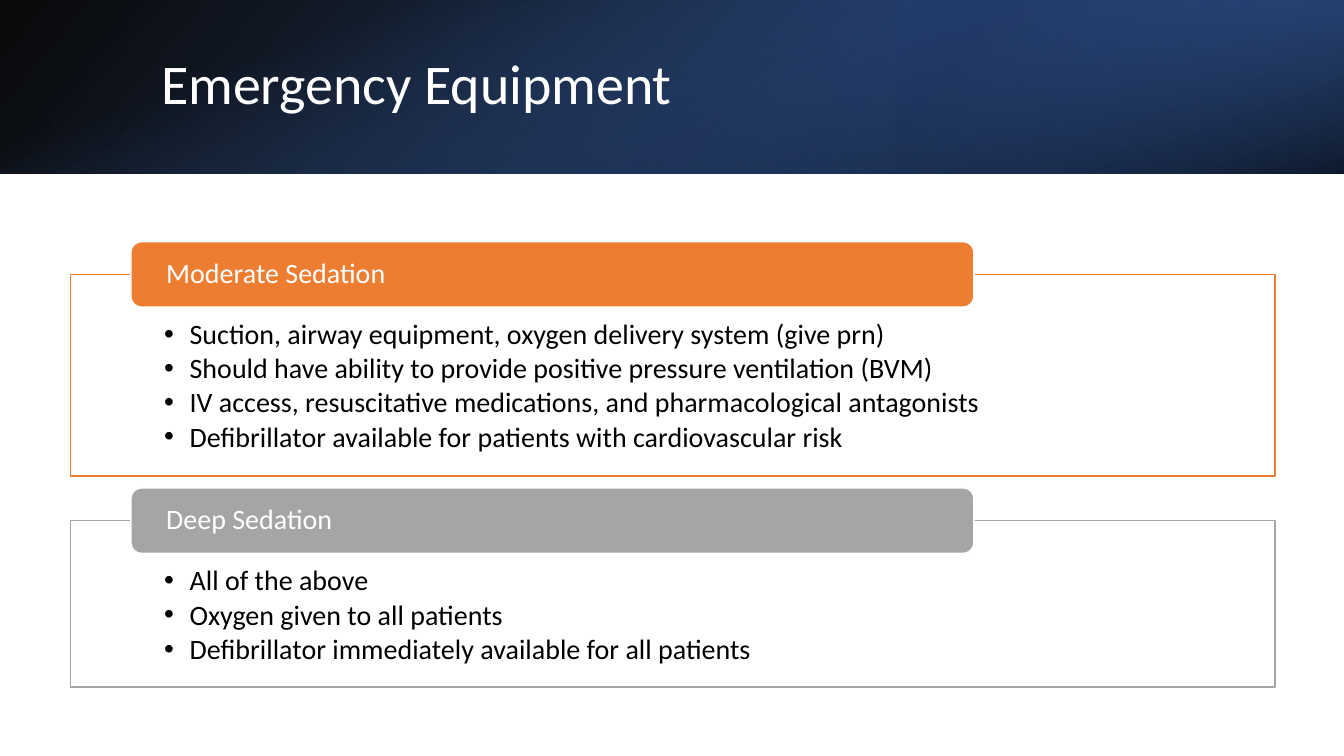
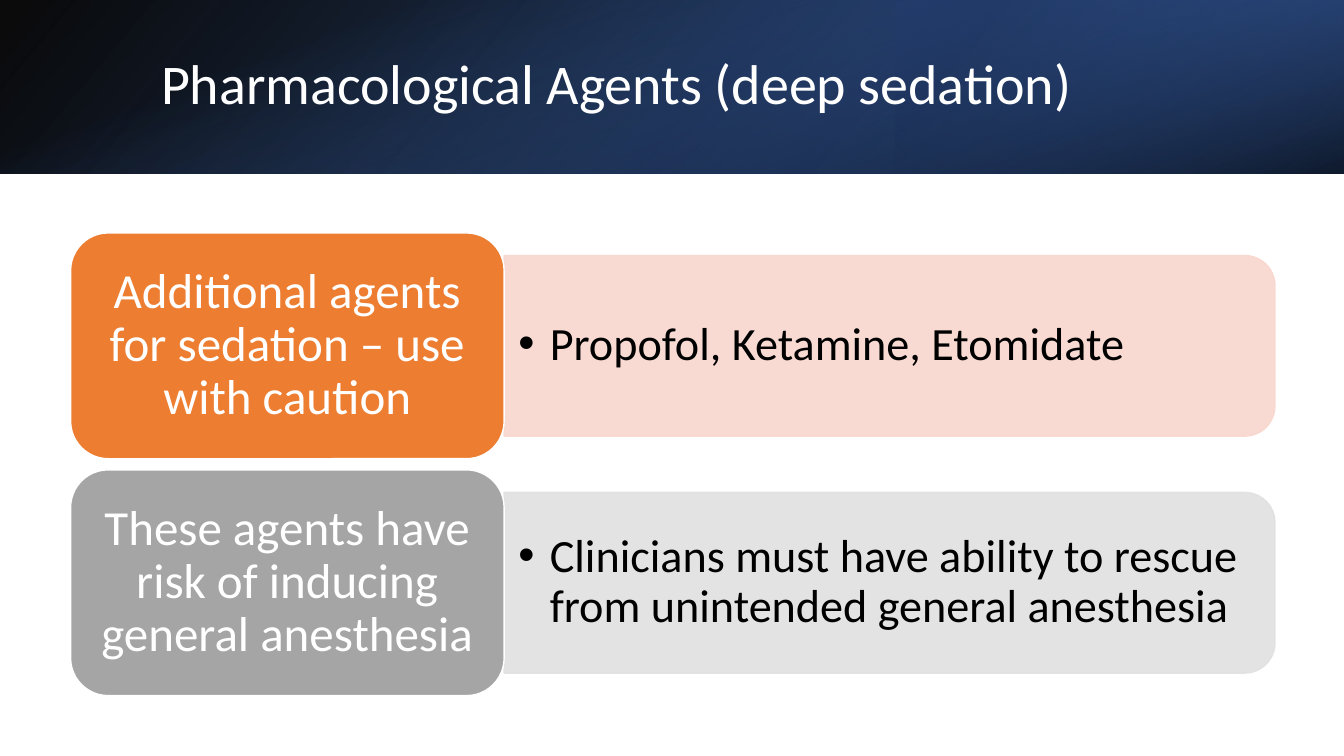
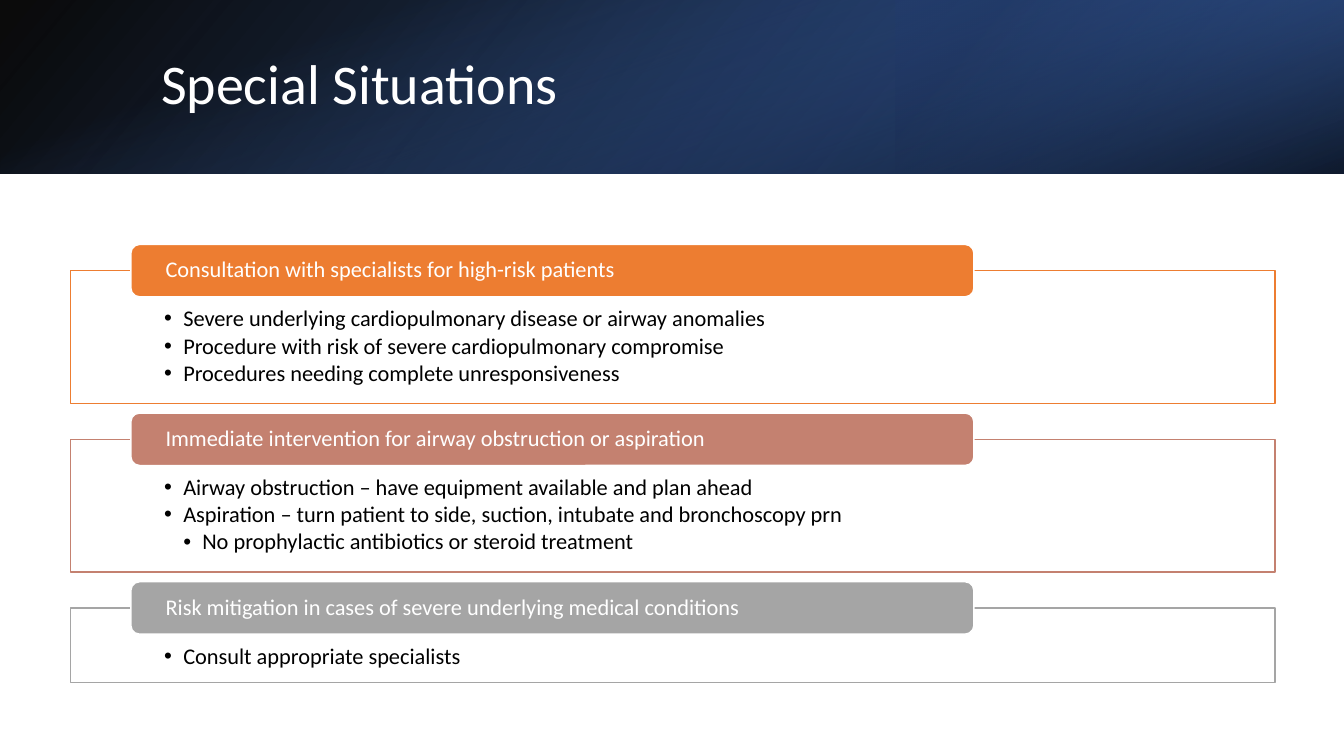
import pptx
import pptx.util
import pptx.dml.color
import pptx.enum.shapes
import pptx.enum.text
import pptx.oxml
import pptx.oxml.ns
from lxml import etree

Cm, Pt = pptx.util.Cm, pptx.util.Pt
SHAPES = pptx.enum.shapes.MSO_SHAPE
ANCHORS = pptx.enum.text.MSO_ANCHOR
ALIGNS = pptx.enum.text.PP_ALIGN
qn = pptx.oxml.ns.qn

# Shared style; all lengths are centimetres
PAGE_WIDTH, PAGE_HEIGHT = 33.87, 19.05
BAND_HEIGHT = 4.38
CONTENT_LEFT, CONTENT_WIDTH = 1.78, 30.35
FONT = "Calibri"
WHITE, BLACK = "FFFFFF", "000000"
ORANGE, ROSE, GRAY = "ED7D31", "C48170", "A5A5A5"
PALE_ORANGE, PALE_GRAY = "F8D7CE", "E1E1E1"


def color(hex_text):
    return pptx.dml.color.RGBColor.from_string(hex_text)


def add_alpha(element, percent):
    for tone in element.iter(qn("a:srgbClr")):
        etree.SubElement(tone, qn("a:alpha"), val=str(percent * 1000))


def add_shape(page, kind, box, fill=None, line=None):
    """Place a flat shape in box = (left, top, width, height)."""
    shape = page.shapes.add_shape(kind, *map(Cm, box))
    shape.shadow.inherit = False
    if fill:
        shape.fill.solid()
        shape.fill.fore_color.rgb = color(fill)
    if line:
        shape.line.color.rgb = color(line)
        shape.line.width = Pt(1)
    else:
        shape.line.fill.background()
    return shape


def set_frame(shape, insets, anchor):
    frame = shape.text_frame
    frame.word_wrap = True
    frame.vertical_anchor = anchor
    (frame.margin_left, frame.margin_top,
     frame.margin_right, frame.margin_bottom) = map(Cm, insets)
    return frame


def style_para(para, text, size, tone, align=ALIGNS.LEFT, after=0.0):
    para.text = text
    para.alignment = align
    para.line_spacing = 0.9
    para.space_after = Pt(round(size * after, 1))
    para.font.name = FONT
    para.font.size = Pt(size)
    para.font.color.rgb = color(tone)


def write_bullets(frame, items, size, indent):
    """Write items; each is a text or a (text, level) pair."""
    for index, item in enumerate(items):
        text, level = item if isinstance(item, tuple) else (item, 1)
        para = frame.add_paragraph() if index else frame.paragraphs[0]
        props = para._p.get_or_add_pPr()
        props.set("marL", str(Cm(indent * level)))
        props.set("indent", str(-Cm(indent)))
        etree.SubElement(props, qn("a:buFont"), typeface="Arial")
        etree.SubElement(props, qn("a:buChar"), char="•")
        style_para(para, text, size, BLACK, after=0.14)


# Title band
def add_gradient(page, box, stops, angle, rotation=0, flip=False):
    shape = add_shape(page, SHAPES.RECTANGLE, box)
    shape.rotation = rotation
    props = shape.element.spPr
    if flip:
        props.find(qn("a:xfrm")).set("flipH", "1")
    stop_xml = "".join(
        f'<a:gs pos="{place * 1000}"><a:srgbClr val="{tone}">'
        f'<a:alpha val="{opacity * 1000}"/></a:srgbClr></a:gs>'
        for place, tone, opacity in stops)
    gradient = pptx.oxml.parse_xml(
        f'<a:gradFill {pptx.oxml.ns.nsdecls("a")}><a:gsLst>{stop_xml}</a:gsLst>'
        f'<a:lin ang="{angle * 60000}" scaled="0"/></a:gradFill>')
    props.find(qn("a:prstGeom")).addnext(gradient)


def add_title_band(page, title):
    third = PAGE_WIDTH / 3
    add_gradient(page, (0, 0, PAGE_WIDTH, BAND_HEIGHT),
                 [(0, BLACK, 96), (100, "2F5597", 100)], 140, flip=True)
    add_gradient(page, (PAGE_WIDTH - third, 0, third, BAND_HEIGHT),
                 [(19, "203864", 68), (100, "4472C4", 79)], 320, 180, True)
    # Upright strip turned on its side to cover the band
    shift = (PAGE_WIDTH - BAND_HEIGHT) / 2
    add_gradient(page, (shift, -shift, BAND_HEIGHT, PAGE_WIDTH),
                 [(23, "4472C4", 0), (99, BLACK, 74)], 340, 90)
    box = page.shapes.add_textbox(Cm(3.81), Cm(0.95), Cm(27.89), Cm(2.44))
    frame = set_frame(box, (0.25, 0.13, 0.25, 0.13), ANCHORS.MIDDLE)
    style_para(frame.paragraphs[0], title, 40, WHITE)


# Framed lists, each with a tab over its top edge
def add_tabbed_list(page, box, tab_height, size, indent, heading, items, tone):
    left, top, width, height = box
    panel = add_shape(page, SHAPES.RECTANGLE, box, WHITE, tone)
    add_alpha(panel.element.spPr.find(qn("a:solidFill")), 90)
    frame = set_frame(panel, (2.36, size * 0.058, 2.36, size * 0.02), ANCHORS.TOP)
    write_bullets(frame, items, size, indent)
    tab = add_shape(page, SHAPES.ROUNDED_RECTANGLE,
                    (left + width * 0.05, top - tab_height / 2,
                     width * 0.7, tab_height), tone, WHITE)
    frame = set_frame(tab, (0.81, 0, 0.81, 0), ANCHORS.MIDDLE)
    style_para(frame.paragraphs[0], heading, size, WHITE, after=0.31)


def build_list_page(page, title, top, size, indent, sections):
    add_title_band(page, title)
    tab_height, gap = size * 0.0825, size * 0.015
    for heading, tone, height, items in sections:
        top += tab_height / 2
        add_tabbed_list(page, (CONTENT_LEFT, top, CONTENT_WIDTH, height),
                        tab_height, size, indent, heading, items, tone)
        top += height + gap


# Cards with a detail panel to the right
def add_card_row(page, box, heading, detail, tone, pale_tone):
    left, top, width, height = box
    card_width = width * 0.36
    panel_left, panel_width = left + card_width, width - card_width
    panel_height = height * 0.8
    middle = top + height / 2
    panel = add_shape(page, SHAPES.ROUND_2_SAME_RECTANGLE,
                      (panel_left + (panel_width - panel_height) / 2,
                       middle - panel_width / 2, panel_height, panel_width),
                      pale_tone, pale_tone)
    add_alpha(panel.element.spPr, 90)
    panel.rotation = 90
    text_height = panel_height - 0.46
    text_box = page.shapes.add_textbox(
        Cm(panel_left), Cm(middle - text_height / 2),
        Cm(panel_width - 0.23), Cm(text_height))
    frame = set_frame(text_box, (0.36, 0.18, 0.36, 0.18), ANCHORS.MIDDLE)
    write_bullets(frame, [detail], 33, 0.79)
    card = add_shape(page, SHAPES.ROUNDED_RECTANGLE,
                     (left, top, card_width, height), tone, WHITE)
    frame = set_frame(card, (0.38, 0.18, 0.38, 0.18), ANCHORS.MIDDLE)
    style_para(frame.paragraphs[0], heading, 35, WHITE, ALIGNS.CENTER, 0.31)


def build_card_page(page, title, rows):
    add_title_band(page, title)
    top, height, gap = 5.87, 5.69, 0.28
    for index, row in enumerate(rows):
        row_top = top + index * (height + gap)
        add_card_row(page, (CONTENT_LEFT, row_top, CONTENT_WIDTH, height), *row)


def main():
    deck = pptx.Presentation()
    deck.slide_width, deck.slide_height = Cm(PAGE_WIDTH), Cm(PAGE_HEIGHT)
    blank = deck.slide_layouts[6]

    build_list_page(
        deck.slides.add_slide(blank), "Emergency Equipment", 6.09, 20, 0.64, [
            ("Moderate Sedation", ORANGE, 5.08, [
                "Suction, airway equipment, oxygen delivery system (give prn)",
                "Should have ability to provide positive pressure ventilation (BVM)",
                "IV access, resuscitative medications, and pharmacological antagonists",
                "Defibrillator available for patients with cardiovascular risk"]),
            ("Deep Sedation", GRAY, 4.19, [
                "All of the above",
                "Oxygen given to all patients",
                "Defibrillator immediately available for all patients"])])

    build_card_page(
        deck.slides.add_slide(blank), "Pharmacological Agents (deep sedation)", [
            ("Additional agents for sedation – use with caution",
             "Propofol, Ketamine, Etomidate", ORANGE, PALE_ORANGE),
            ("These agents have risk of inducing general anesthesia",
             "Clinicians must have ability to rescue from unintended general anesthesia",
             GRAY, PALE_GRAY)])

    build_list_page(
        deck.slides.add_slide(blank), "Special Situations", 6.16, 16, 0.48, [
            ("Consultation with specialists for high-risk patients", ORANGE, 3.35, [
                "Severe underlying cardiopulmonary disease or airway anomalies",
                "Procedure with risk of severe cardiopulmonary compromise",
                "Procedures needing complete unresponsiveness"]),
            ("Immediate intervention for airway obstruction or aspiration", ROSE, 3.35, [
                "Airway obstruction – have equipment available and plan ahead",
                "Aspiration – turn patient to side, suction, intubate and bronchoscopy prn",
                ("No prophylactic antibiotics or steroid treatment", 2)]),
            ("Risk mitigation in cases of severe underlying medical conditions",
             GRAY, 1.88, ["Consult appropriate specialists"])])

    deck.save("out.pptx")


if __name__ == "__main__":
    main()
